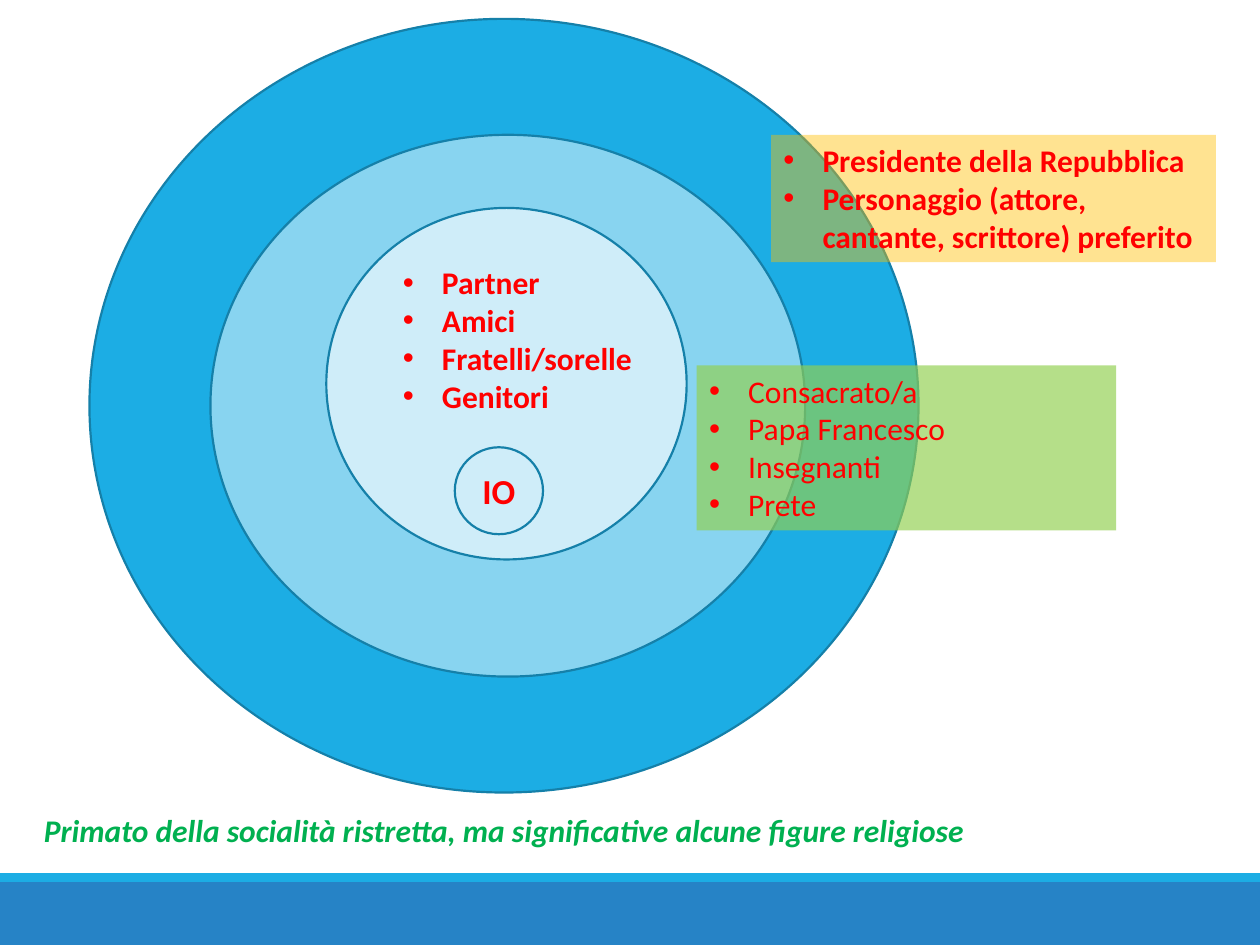
from dataclasses import dataclass

from lxml import etree
from pptx import Presentation
from pptx.dml.color import RGBColor
from pptx.enum.shapes import MSO_SHAPE
from pptx.enum.text import MSO_ANCHOR, MSO_AUTO_SIZE, PP_ALIGN
from pptx.oxml.ns import qn
from pptx.util import Inches, Pt

RECT, OVAL = MSO_SHAPE.RECTANGLE, MSO_SHAPE.OVAL
CENTER, LEFT = PP_ALIGN.CENTER, PP_ALIGN.LEFT
MIDDLE, TOP = MSO_ANCHOR.MIDDLE, MSO_ANCHOR.TOP
FIT_SHAPE = MSO_AUTO_SIZE.SHAPE_TO_FIT_TEXT

FONT = "Calibri"
RED, GREEN, WHITE = "FF0000", "00B050", "FFFFFF"
BLUE, DARK_BLUE, OUTLINE = "1CADE4", "2683C6", "1580A9"
INDENT = Inches(0.31)


@dataclass
class Area:
    """A filled shape; opacity is in percent, no fill means hollow."""
    box: tuple[float, float, float, float]
    fill: str | None = None
    opacity: int = 100
    line: str | None = None


@dataclass
class BulletList:
    area: Area
    items: list[str]
    bold: bool = True


BANDS = [
    Area((0, 7, 10, 0.5), DARK_BLUE),
    Area((0, 6.93, 10, 0.07), BLUE),
]
CIRCLES = [
    Area((0.71, 0.15, 6.58, 6.14), BLUE, line=OUTLINE),
    Area((1.67, 1.07, 4.72, 4.3), WHITE, 48, OUTLINE),
    Area((2.59, 1.65, 2.86, 2.79), WHITE, 60, OUTLINE),
]
SELF = Area((3.61, 3.55, 0.7, 0.69), line=OUTLINE)
LISTS = [
    BulletList(Area((3.1, 2.04, 2.04, 1.31)),
               ["Partner", "Amici", "Fratelli/sorelle", "Genitori"]),
    BulletList(Area((5.53, 2.9, 3.33, 1.31), "92D050", 67),
               ["Consacrato/a", "Papa Francesco", "Insegnanti", "Prete"], bold=False),
    BulletList(Area((6.12, 1.07, 3.53, 1.01), "FFC000", 43),
               ["Presidente della Repubblica",
                "Personaggio (attore, cantante, scrittore) preferito"]),
]
CAPTION = Area((0.25, 6.39, 9.57, 0.4))


def rgb(color: str) -> RGBColor:
    return RGBColor.from_string(color)


def add_area(shapes, area: Area, kind=RECT):
    sp = shapes.add_shape(kind, *map(Inches, area.box))
    sp.shadow.inherit = False
    if area.fill:
        sp.fill.solid()
        sp.fill.fore_color.rgb = rgb(area.fill)
        if area.opacity < 100:
            clr = sp.fill._xPr.find(qn("a:solidFill"))[0]
            etree.SubElement(clr, qn("a:alpha"), val=str(area.opacity * 1000))
    else:
        sp.fill.background()
    if area.line:
        sp.line.color.rgb = rgb(area.line)
        sp.line.width = Pt(1.25)
    else:
        sp.line.fill.background()
    return sp


def add_textbox(shapes, area: Area):
    return shapes.add_textbox(*map(Inches, area.box))


def write(sp, lines: list[str], color: str = RED, size: int = 18, bold: bool = True,
          italic: bool = False, align=LEFT, anchor=TOP) -> None:
    tf = sp.text_frame
    tf.word_wrap = True
    tf.vertical_anchor = anchor
    tf.text = "\n".join(lines)
    for p in tf.paragraphs:
        p.alignment = align
        font = p.runs[0].font
        font.name, font.size = FONT, Pt(size)
        font.bold, font.italic = bold, italic
        font.color.rgb = rgb(color)


def add_bullets(sp) -> None:
    for p in sp.text_frame.paragraphs:
        pPr = p._p.get_or_add_pPr()
        pPr.set("marL", str(INDENT))
        pPr.set("indent", str(-INDENT))
        etree.SubElement(pPr, qn("a:buFont"), typeface="Arial")
        etree.SubElement(pPr, qn("a:buChar"), char="•")


def main() -> None:
    prs = Presentation()
    prs.slide_width, prs.slide_height = Inches(10), Inches(7.5)
    shapes = prs.slides.add_slide(prs.slide_layouts[6]).shapes

    # Footer bands
    for band in BANDS:
        add_area(shapes, band)

    # Circles of closeness, with the self at the centre
    for circle in CIRCLES:
        add_area(shapes, circle, OVAL)
    sp = add_area(shapes, SELF, OVAL)
    write(sp, ["IO"], size=20, align=CENTER, anchor=MIDDLE)

    # Lists of people
    for group in LISTS:
        add = add_area if group.area.fill else add_textbox
        sp = add(shapes, group.area)
        write(sp, group.items, bold=group.bold)
        add_bullets(sp)
        sp.text_frame.auto_size = FIT_SHAPE

    # Caption
    sp = add_textbox(shapes, CAPTION)
    write(sp, ["Primato della socialità ristretta, ma significative alcune figure religiose"],
          color=GREEN, italic=True)
    sp.text_frame.auto_size = FIT_SHAPE

    prs.save("out.pptx")


if __name__ == "__main__":
    main()
